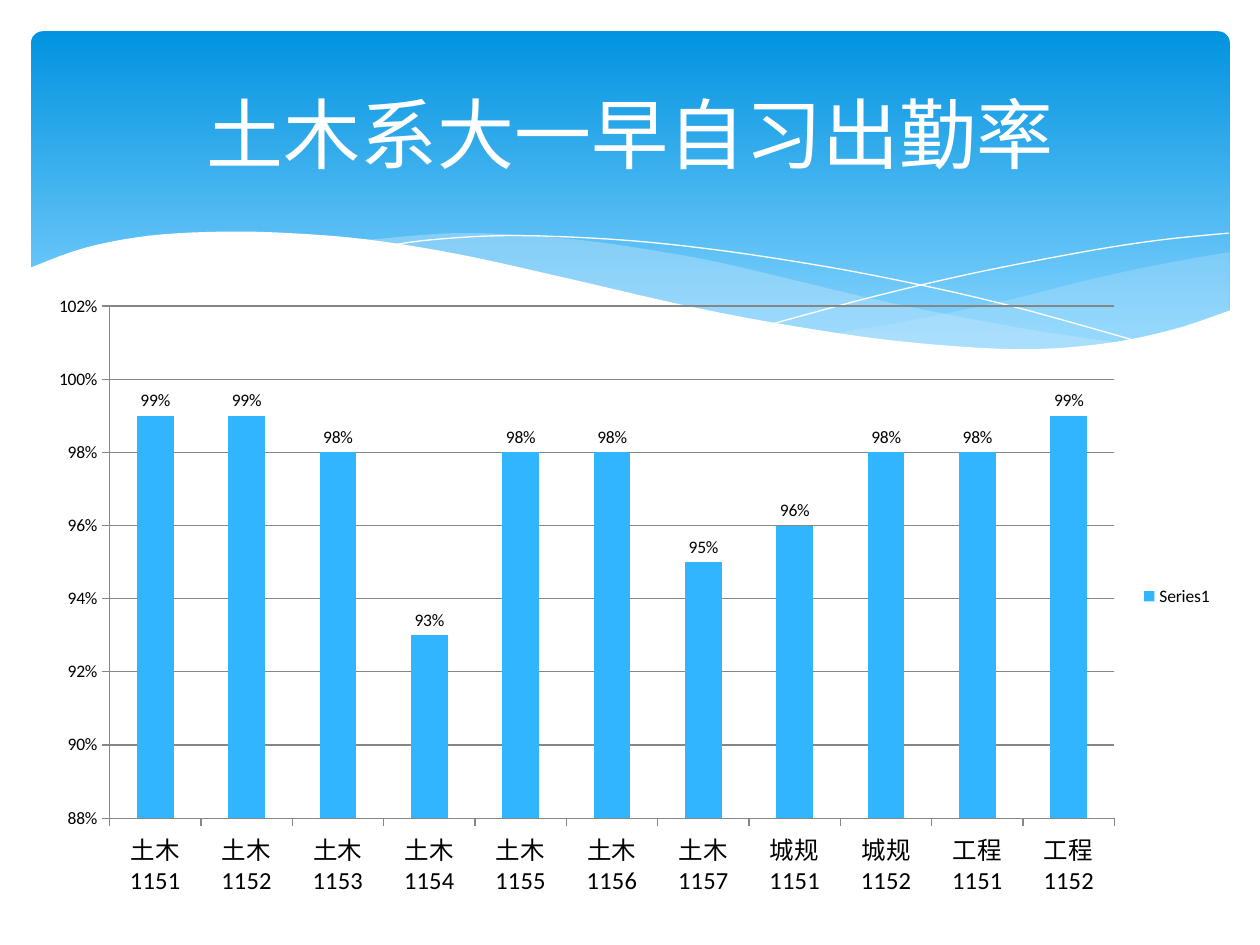
from dataclasses import dataclass
from itertools import chain

from lxml.etree import SubElement
from pptx import Presentation
from pptx.chart.data import CategoryChartData
from pptx.dml.color import RGBColor
from pptx.enum.chart import XL_CHART_TYPE, XL_LABEL_POSITION, XL_LEGEND_POSITION, XL_TICK_MARK
from pptx.enum.shapes import MSO_SHAPE
from pptx.enum.text import MSO_ANCHOR, PP_ALIGN
from pptx.oxml.ns import qn
from pptx.util import Cm, Pt


@dataclass(frozen=True)
class Theme:
    font: str = "Calibri"
    sky_top: RGBColor = RGBColor(0x02, 0x93, 0xE0)
    sky_bottom: RGBColor = RGBColor(0x83, 0xD3, 0xFE)
    mist: RGBColor = RGBColor(0xC6, 0xE7, 0xFC)
    bar: RGBColor = RGBColor(0x31, 0xB6, 0xFD)
    grid: RGBColor = RGBColor(0x86, 0x86, 0x86)
    white: RGBColor = RGBColor(0xFF, 0xFF, 0xFF)
    black: RGBColor = RGBColor(0, 0, 0)
    title_size: Pt = Pt(44)
    category_size: Pt = Pt(14)
    chart_size: Pt = Pt(10)


THEME = Theme()

RIGHT_MIST = (
    [(16.79, 6.73), (18.52, 6.43), (20.45, 6.02), (21.87, 5.66), (23.39, 5.33), (24.79, 5.08)],
    [(24.79, 6.27), (23.75, 6.65), (22.58, 6.91), (21.21, 7.04), (19.84, 7.04), (18.26, 6.91),
     (16.79, 6.73)],
)
WIDE_MIST = (
    [(22.68, 6.93), (20.5, 6.6), (17.93, 6.1), (15.98, 5.64), (14.45, 5.28), (13.06, 5.03),
     (11.81, 4.85), (10.67, 4.75), (9.65, 4.7), (8.74, 4.72), (7.26, 4.85)],
    [(7.26, 4.85), (9.19, 5.16), (11.4, 5.64), (13.46, 6.1), (15.27, 6.48), (16.89, 6.76),
     (18.34, 6.96), (19.63, 7.04), (20.78, 7.06), (21.77, 7.04), (22.68, 6.93)],
)
FALLING_LINE = [(7.85, 4.95), (8.74, 4.83), (10.19, 4.75), (11.91, 4.8), (13.54, 4.93),
                (15.44, 5.18), (17.65, 5.56), (20.19, 6.12), (23.04, 6.91)]
RISING_LINE = [(15.57, 6.53), (17.65, 5.97), (19.71, 5.49), (22, 5.05), (23.47, 4.83),
               (24.77, 4.7)]
WHITE_WAVE = (
    [(24.82, 6.25), (23.62, 6.65), (22.23, 6.93), (20.55, 7.04), (18.44, 6.91), (16.46, 6.65),
     (14.1, 6.22), (11.35, 5.59), (9.27, 5.13), (7.42, 4.83), (5.84, 4.7), (4.5, 4.67),
     (3.02, 4.75), (1.7, 5), (0.58, 5.41)],
    [(0.58, 8.36), (24.82, 8.36)],
)

ATTENDANCE = {
    "土木1151": 0.99, "土木1152": 0.99, "土木1153": 0.98, "土木1154": 0.93,
    "土木1155": 0.98, "土木1156": 0.98, "土木1157": 0.95, "城规1151": 0.96,
    "城规1152": 0.98, "工程1151": 0.98, "工程1152": 0.99,
}


def smooth(knots, steps=5):
    """Catmull-Rom curve through the knots."""
    padded = [knots[0], *knots, knots[-1]]
    curve = [knots[0]]
    for a, b, c, d in zip(padded, padded[1:], padded[2:], padded[3:]):
        for step in range(1, steps + 1):
            t = step / steps
            curve.append(tuple(
                q + t * (r - p) / 2 + t**2 * (p - 2.5 * q + 2 * r - s / 2)
                + t**3 * (1.5 * (q - r) + (s - p) / 2)
                for p, q, r, s in zip(a, b, c, d)))
    return curve


def add_curve(page, edges, closed):
    points = [(Cm(x), Cm(y)) for x, y in chain.from_iterable(map(smooth, edges))]
    builder = page.shapes.build_freeform(*points[0])
    builder.add_line_segments(points[1:], close=closed)
    shape = builder.convert_to_shape()
    shape.shadow.inherit = False
    return shape


def add_wave(page, edges, color, opacity=100):
    wave = add_curve(page, edges, closed=True)
    wave.fill.solid()
    wave.fill.fore_color.rgb = color
    wave.line.fill.background()
    if opacity < 100:
        color_node = wave.element.spPr.find(qn("a:solidFill"))[0]
        SubElement(color_node, qn("a:alpha")).set("val", str(opacity * 1000))


def add_hairline(page, knots):
    hairline = add_curve(page, [knots], closed=False)
    hairline.fill.background()
    hairline.line.color.rgb = THEME.white
    hairline.line.width = Pt(0)


def add_banner(page):
    banner = page.shapes.add_shape(
        MSO_SHAPE.ROUNDED_RECTANGLE, Cm(0.63), Cm(0.63), Cm(24.16), Cm(6.86))
    banner.adjustments[0] = 0.034
    banner.shadow.inherit = False
    banner.line.fill.background()
    banner.fill.gradient()
    banner.fill.gradient_angle = 270
    colors = ((0, THEME.sky_top), (0.9, THEME.sky_bottom))
    for stop, (position, color) in zip(banner.fill.gradient_stops, colors):
        stop.position = position
        stop.color.rgb = color


def style_font(font, size, color):
    font.name = THEME.font
    font.size = size
    font.color.rgb = color


def place_title(page, text):
    title = page.shapes.title
    title.left, title.top, title.width, title.height = Cm(1.27), Cm(0.94), Cm(22.86), Cm(3.48)
    title.text_frame.text = text
    title.text_frame.vertical_anchor = MSO_ANCHOR.MIDDLE
    para = title.text_frame.paragraphs[0]
    para.alignment = PP_ALIGN.CENTER
    style_font(para.runs[0].font, THEME.title_size, THEME.white)
    title.element.getparent().append(title.element)


def style_axis(axis, size):
    axis.major_tick_mark = XL_TICK_MARK.OUTSIDE
    axis.minor_tick_mark = XL_TICK_MARK.NONE
    axis.format.line.color.rgb = THEME.grid
    style_font(axis.tick_labels.font, size, THEME.black)


def add_attendance_chart(page):
    data = CategoryChartData(number_format="0%")
    data.categories = ATTENDANCE.keys()
    data.add_series("Series1", ATTENDANCE.values())
    chart = page.shapes.add_chart(
        XL_CHART_TYPE.COLUMN_CLUSTERED, Cm(0.71), Cm(5.72), Cm(24), Cm(12.6), data).chart
    style_font(chart.font, THEME.chart_size, THEME.black)
    chart.has_title = False
    chart.has_legend = True
    chart.legend.position = XL_LEGEND_POSITION.RIGHT
    chart.legend.include_in_layout = False

    style_axis(chart.category_axis, THEME.category_size)
    axis = chart.value_axis
    style_axis(axis, THEME.chart_size)
    axis.minimum_scale, axis.maximum_scale, axis.major_unit = 0.88, 1.02, 0.02
    axis.major_gridlines.format.line.color.rgb = THEME.grid
    axis.tick_labels.number_format = "0%"
    axis.tick_labels.number_format_is_linked = False

    plot = chart.plots[0]
    plot.gap_width = 150
    plot.vary_by_categories = False
    fill = plot.series[0].format.fill
    fill.solid()
    fill.fore_color.rgb = THEME.bar
    plot.has_data_labels = True
    labels = plot.data_labels
    labels.show_value = True
    labels.number_format = "0%"
    labels.number_format_is_linked = False
    labels.position = XL_LABEL_POSITION.OUTSIDE_END
    style_font(labels.font, THEME.chart_size, THEME.black)


def main():
    deck = Presentation()
    deck.slide_width, deck.slide_height = Cm(25.4), Cm(19.05)
    page = deck.slides.add_slide(deck.slide_layouts.get_by_name("Title Only"))
    add_banner(page)
    add_wave(page, RIGHT_MIST, THEME.mist, opacity=29)
    add_wave(page, WIDE_MIST, THEME.mist, opacity=40)
    add_hairline(page, FALLING_LINE)
    add_hairline(page, RISING_LINE)
    add_wave(page, WHITE_WAVE, THEME.white)
    place_title(page, "土木系大一早自习出勤率")
    add_attendance_chart(page)
    deck.save("out.pptx")


if __name__ == "__main__":
    main()
